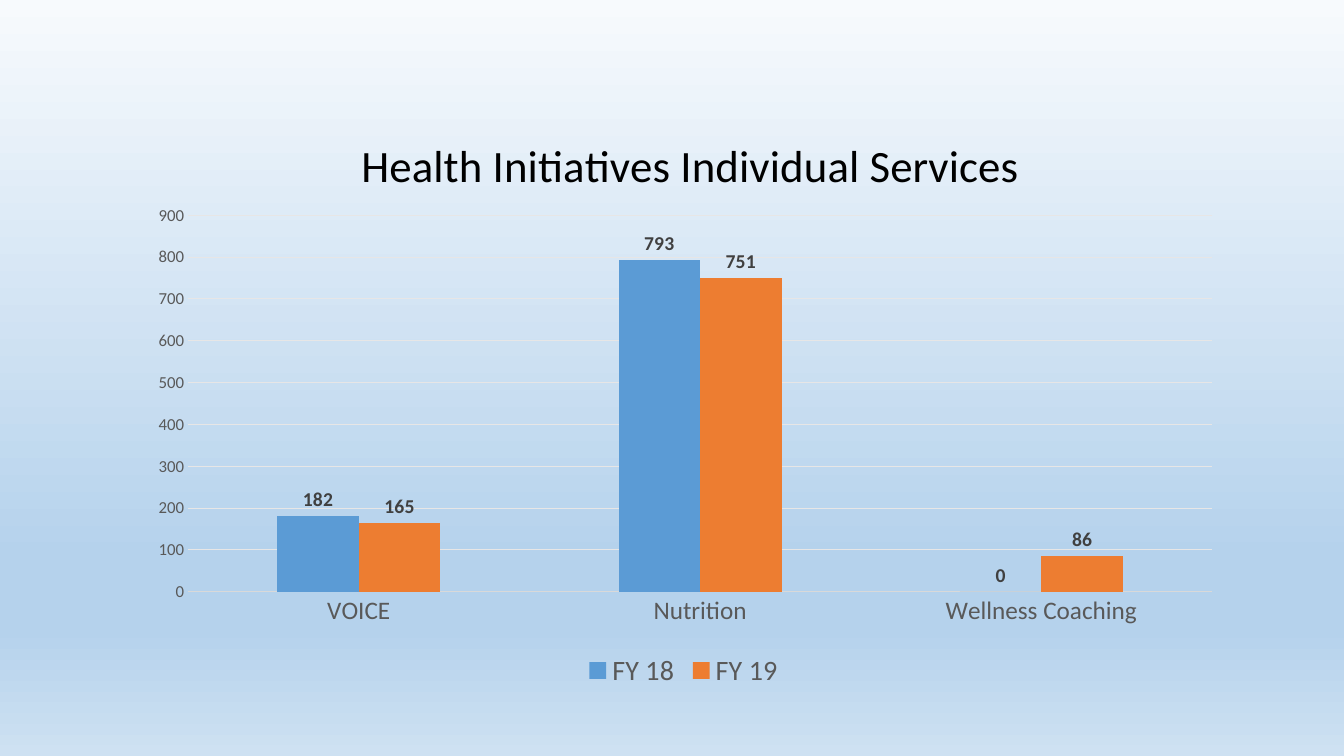
from pptx import Presentation
from pptx.chart.data import CategoryChartData
from pptx.dml.color import RGBColor
from pptx.enum.chart import XL_CHART_TYPE, XL_LABEL_POSITION, XL_LEGEND_POSITION, XL_TICK_MARK
from pptx.oxml import parse_xml
from pptx.oxml.ns import nsdecls, qn
from pptx.util import Inches, Pt

COLUMNS = XL_CHART_TYPE.COLUMN_CLUSTERED
BOTTOM = XL_LEGEND_POSITION.BOTTOM
OUTSIDE_END = XL_LABEL_POSITION.OUTSIDE_END
NO_TICK = XL_TICK_MARK.NONE

FONT = "Calibri"
GREY = "595959"
BACKGROUND = [(0, "F7FAFD"), (74, "B5D2EC"), (83, "B5D2EC"), (100, "CEE1F2")]
TITLE = "Health Initiatives Individual Services"
SERVICES = ["VOICE", "Nutrition", "Wellness Coaching"]
YEARS = [("FY 18", (182, 793, 0), "5B9BD5"), ("FY 19", (165, 751, 86), "ED7D31")]


def rgb(value):
    return RGBColor.from_string(value)


def set_font(font, size, color, bold=False):
    for name, value in {"name": FONT, "size": Pt(size), "bold": bold}.items():
        setattr(font, name, value)
    font.color.rgb = rgb(color)


def set_line(line, color):
    line.color.rgb = rgb(color)
    line.width = Pt(0.75)


def set_background(s, stops):
    fill = s.background.fill
    fill.gradient()
    fill.gradient_angle = 270
    stop_list = s.element.find(".//" + qn("a:gsLst"))
    for stop in list(stop_list):
        stop_list.remove(stop)
    for percent, color in stops:
        stop_list.append(parse_xml(
            f'<a:gs {nsdecls("a")} pos="{percent * 1000}"><a:srgbClr val="{color}"/></a:gs>'))


def make_layout(target="", **fractions):
    """Build a manual layout from fractions of the chart area."""
    inner = f'<c:layoutTarget val="{target}"/>' if target else ""
    modes = '<c:xMode val="edge"/><c:yMode val="edge"/>'
    sizes = "".join(f'<c:{key} val="{value}"/>' for key, value in fractions.items())
    return parse_xml(f'<c:layout {nsdecls("c")}><c:manualLayout>{inner}{modes}{sizes}'
                     '</c:manualLayout></c:layout>')


def replace_layout(parent, layout, index):
    for old in parent.findall(qn("c:layout")):
        parent.remove(old)
    parent.insert(index, layout)


def add_title(chart, text):
    chart.has_title = True
    title = chart.chart_title
    p = title.text_frame.paragraphs[0]
    r = p.add_run()
    r.text = text
    set_font(r.font, 32, "000000")
    title.include_in_layout = False
    replace_layout(title.element, make_layout(x=0.2, y=0.05), 1)


def style_axes(chart):
    for axis, size in ((chart.category_axis, 18), (chart.value_axis, 12)):
        axis.major_tick_mark = axis.minor_tick_mark = NO_TICK
        set_font(axis.tick_labels.font, size, GREY)
    set_line(chart.category_axis.format.line, "D9D9D9")
    values = chart.value_axis
    values.minimum_scale, values.maximum_scale, values.major_unit = 0, 900, 100
    values.format.line.fill.background()
    set_line(values.major_gridlines.format.line, "E7E6E6")


def style_series(series, color):
    series.format.fill.solid()
    series.format.fill.fore_color.rgb = rgb(color)
    labels = series.data_labels
    labels.show_value = True
    labels.position = OUTSIDE_END
    set_font(labels.font, 14, "404040", bold=True)


def add_column_chart(s, left, top, width, height):
    data = CategoryChartData()
    data.categories = SERVICES
    for name, values, _ in YEARS:
        data.add_series(name, values)
    box = [Inches(n) for n in (left, top, width, height)]
    chart = s.shapes.add_chart(COLUMNS, *box, data).chart
    set_font(chart.font, 10, "000000")
    add_title(chart, TITLE)
    style_axes(chart)

    # Columns
    plot = chart.plots[0]
    plot.vary_by_categories = False
    plot.gap_width, plot.overlap = 219, 0
    for series, (_, _, color) in zip(plot.series, YEARS):
        style_series(series, color)
    plot_area = chart.element.find(".//" + qn("c:plotArea"))
    replace_layout(plot_area, make_layout("inner", x=0.05, y=0.2, w=0.93, h=0.63), 0)

    # Legend
    chart.has_legend = True
    chart.legend.position = BOTTOM
    chart.legend.include_in_layout = False
    set_font(chart.legend.font, 20, GREY)


def main():
    prs = Presentation()
    prs.slide_width, prs.slide_height = Inches(13.33), Inches(7.5)
    s = prs.slides.add_slide(prs.slide_layouts[6])
    set_background(s, BACKGROUND)
    add_column_chart(s, 1.32, 0.95, 10.92, 5.93)
    prs.save("out.pptx")


if __name__ == "__main__":
    main()
